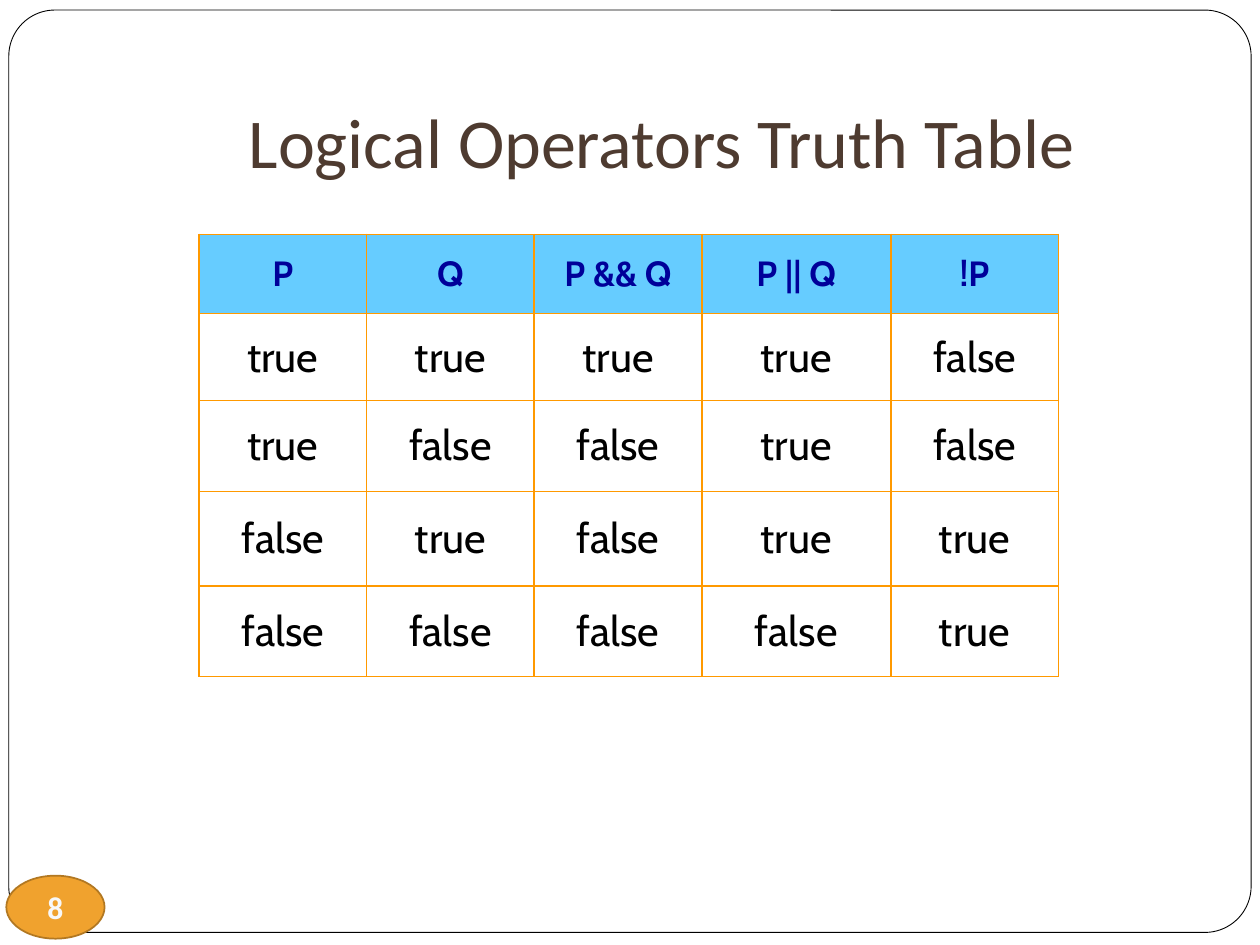
"""Build a slide with the truth table of the logical operators."""
from dataclasses import dataclass
from itertools import product

from lxml import etree
from pptx import Presentation
from pptx import util as u
from pptx.dml.color import RGBColor
from pptx.enum import shapes, text
from pptx.oxml.ns import qn


@dataclass(frozen=True)
class Theme:
    white: str = "FFFFFF"
    black: str = "000000"
    brown: str = "4E3B30"
    gold: str = "F0A22E"
    rim: str = "B27822"
    pale: str = "F8F8F8"
    sky: str = "66CCFF"
    navy: str = "000099"
    grid: str = "FF9900"
    main: str = "Calibri"
    cell: str = "Cabin"
    title: int = 40
    head: int = 20
    body: int = 24
    page: int = 18


theme = Theme()


def write(frame, words, font, size, color, bold=False):
    frame.text = words
    para = frame.paragraphs[0]
    para.alignment = text.PP_ALIGN.CENTER
    face = para.runs[0].font
    face.name, face.size, face.bold = font, u.Pt(size), bold
    face.color.rgb = RGBColor.from_string(color)
    return para


def draw(kind, box, fill, line, width):
    shape = slide.shapes.add_shape(kind, *map(u.Inches, box))
    shape.shadow.inherit = False
    shape.fill.solid()
    shape.fill.fore_color.rgb = RGBColor.from_string(fill)
    shape.line.color.rgb = RGBColor.from_string(line)
    shape.line.width = u.Pt(width)
    return shape


deck = Presentation()
deck.slide_width, deck.slide_height = u.Inches(10), u.Inches(7.5)
slide = deck.slides.add_slide(deck.slide_layouts[6])

kinds = shapes.MSO_SHAPE
frame = draw(kinds.ROUNDED_RECTANGLE, (0.07, 0.08, 9.86, 7.32), theme.white, theme.black, 0.5)
frame.adjustments[0] = 0.05

badge = draw(kinds.OVAL, (0.05, 6.95, 0.78, 0.5), theme.gold, theme.rim, 1).text_frame
badge.margin_left = badge.margin_right = badge.margin_top = badge.margin_bottom = 0
badge.vertical_anchor = text.MSO_ANCHOR.MIDDLE
write(badge, "8", theme.main, theme.page, theme.pale, True)

title = slide.shapes.add_textbox(*map(u.Inches, (1, 0.3, 8.5, 1.25))).text_frame
title.word_wrap = True
title.margin_bottom = u.Inches(0.1)
title.vertical_anchor = text.MSO_ANCHOR.BOTTOM
write(title, "Logical Operators Truth Table", theme.main, theme.title, theme.brown)

rows = [["P", "Q", "P && Q", "P || Q", "!P"]]
for p, q in product((True, False), repeat=2):
    rows.append([str(v).lower() for v in (p, q, p and q, p or q, not p)])

wides = [1.33, 1.33, 1.33, 1.5, 1.33]
highs = [0.63, 0.69, 0.72, 0.75, 0.72]
box = (1.58, 1.86, sum(wides), sum(highs))
table = slide.shapes.add_table(len(rows), len(wides), *map(u.Inches, box)).table
table.first_row = table.horz_banding = False
for col, wide in zip(table.columns, wides):
    col.width = u.Inches(wide)

for i, (row, high) in enumerate(zip(rows, highs)):
    table.rows[i].height = u.Inches(high)
    head = i == 0
    size = theme.head if head else theme.body
    color = theme.navy if head else theme.black
    for j, words in enumerate(row):
        cell = table.cell(i, j)
        cell.vertical_anchor = text.MSO_ANCHOR.MIDDLE
        para = write(cell.text_frame, words, theme.cell, size, color, head)
        para.space_before, para.space_after = u.Pt(size * 0.2), u.Pt(size * 0.15)
        props = cell._tc.get_or_add_tcPr()
        for side in ("lnL", "lnR", "lnT", "lnB"):
            edge = etree.SubElement(props, qn(f"a:{side}"), w=str(u.Pt(1)))
            paint = etree.SubElement(edge, qn("a:solidFill"))
            etree.SubElement(paint, qn("a:srgbClr"), val=theme.grid)
        if head:
            cell.fill.solid()
            cell.fill.fore_color.rgb = RGBColor.from_string(theme.sky)
        else:
            cell.fill.background()

deck.save("out.pptx")
